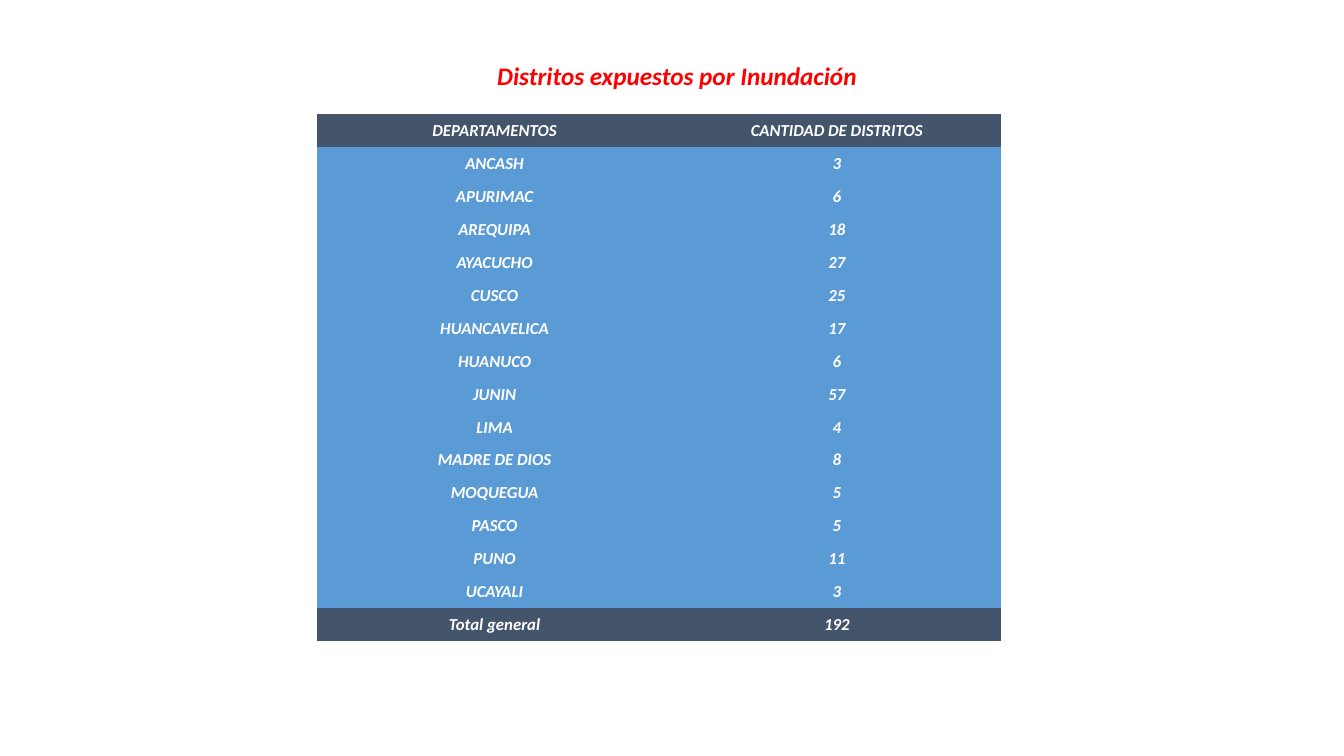
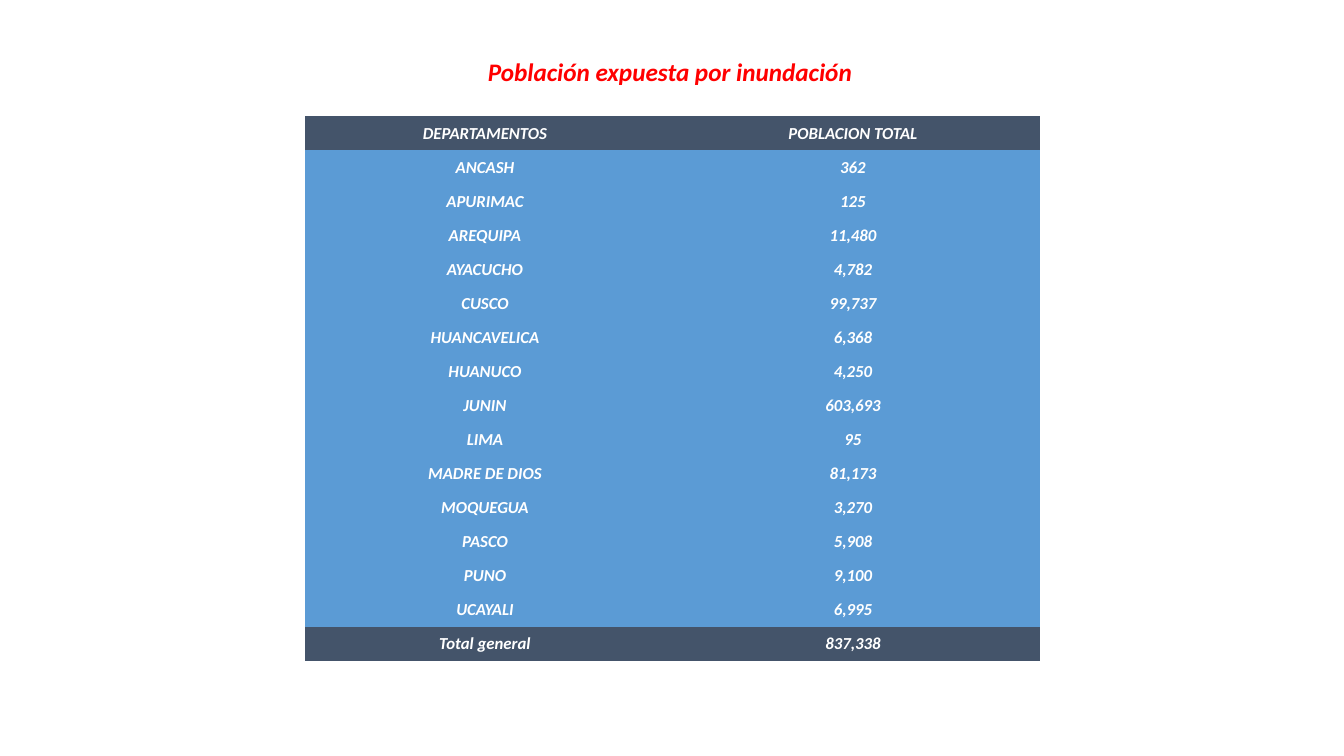
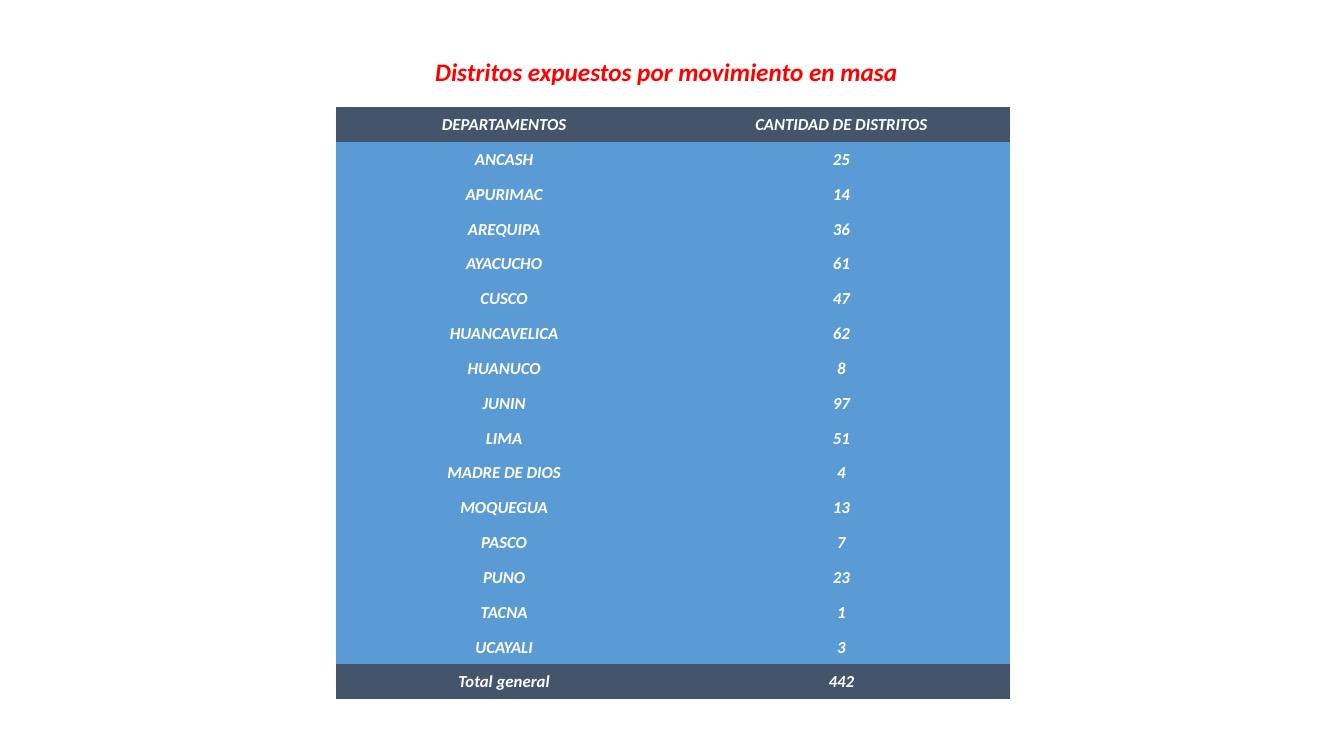
from pptx import Presentation
from pptx import util as u
from pptx.dml import color
from pptx.enum import text as t

RED, WHITE, DARK, BLUE = "FF0000", "FFFFFF", "44546A", "5B9BD5"
BARE = "{2D5ABB26-0587-4C30-8999-92F81FD0307C}"  # no style, no grid
FONT = {"name": "Calibri", "bold": True, "italic": True}
CELL = {
    "vertical_anchor": t.MSO_ANCHOR.MIDDLE,
    "margin_left": u.Inches(0.01),
    "margin_right": u.Inches(0.01),
    "margin_top": u.Inches(0.01),
    "margin_bottom": 0,
}
FRAME = {"word_wrap": False, "auto_size": t.MSO_AUTO_SIZE.SHAPE_TO_FIT_TEXT}

AREAS = [
    "ANCASH", "APURIMAC", "AREQUIPA", "AYACUCHO", "CUSCO", "HUANCAVELICA",
    "HUANUCO", "JUNIN", "LIMA", "MADRE DE DIOS", "MOQUEGUA", "PASCO",
    "PUNO", "UCAYALI",
]
COUNT = "CANTIDAD DE DISTRITOS"

# Title and its box, table box, column widths, heading, areas, values, total
SLIDES = [
    ("Distritos expuestos por Inundación", (4.81, 0.55, 3.81, 0.4),
     (3.14, 1.13, 6.79, 5.23), (3.53, 3.26), COUNT, AREAS,
     [3, 6, 18, 27, 25, 17, 6, 57, 4, 8, 5, 5, 11, 3], 192),
    ("Población expuesta por inundación", (4.72, 0.51, 3.85, 0.4),
     (3.02, 1.15, 7.3, 5.41), (3.58, 3.72), "POBLACION TOTAL", AREAS,
     [362, 125, 11480, 4782, 99737, 6368, 4250, 603693, 95, 81173, 3270,
      5908, 9100, 6995], 837338),
    ("Distritos expuestos por movimiento en masa", (4.16, 0.51, 4.9, 0.4),
     (3.33, 1.06, 6.69, 5.88), (3.34, 3.35), COUNT,
     AREAS[:-1] + ["TACNA"] + AREAS[-1:],
     [25, 14, 36, 61, 47, 62, 8, 97, 51, 4, 13, 7, 23, 1, 3], 442),
]


def rgb(code):
    return color.RGBColor.from_string(code)


def put(item, form):
    for key, value in form.items():
        setattr(item, key, value)


def write(frame, words, size, code):
    para = frame.paragraphs[0]
    para.alignment = t.PP_ALIGN.CENTER
    run = para.add_run()
    run.text = words
    put(run.font, {**FONT, "size": u.Pt(size)})
    run.font.color.rgb = rgb(code)


def title(slide, box, words):
    frame = slide.shapes.add_textbox(*map(u.Inches, box)).text_frame
    put(frame, FRAME)
    write(frame, words, 18, RED)


def table(slide, box, widths, rows):
    shape = slide.shapes.add_table(len(rows), 2, *map(u.Inches, box))
    grid = shape.table
    put(grid, {"first_row": False, "horz_banding": False})
    grid._tbl.tblPr[0].text = BARE
    for col, width in zip(grid.columns, widths):
        col.width = u.Inches(width)
    # Dark first and last rows, blue between
    for r, row in enumerate(rows):
        grid.rows[r].height = u.Inches(box[3] / len(rows))
        fill = DARK if r in (0, len(rows) - 1) else BLUE
        for c, words in enumerate(row):
            cell = grid.cell(r, c)
            put(cell, CELL)
            cell.fill.solid()
            cell.fill.fore_color.rgb = rgb(fill)
            write(cell.text_frame, words, 12, WHITE)


def main():
    deck = Presentation()
    put(deck, {"slide_width": u.Inches(13.33), "slide_height": u.Inches(7.5)})
    for words, top, box, widths, head, areas, values, total in SLIDES:
        slide = deck.slides.add_slide(deck.slide_layouts[6])
        title(slide, top, words)
        body = [(area, f"{n:,}") for area, n in zip(areas, values)]
        rows = [("DEPARTAMENTOS", head), *body, ("Total general", f"{total:,}")]
        table(slide, box, widths, rows)
    deck.save("out.pptx")


if __name__ == "__main__":
    main()
